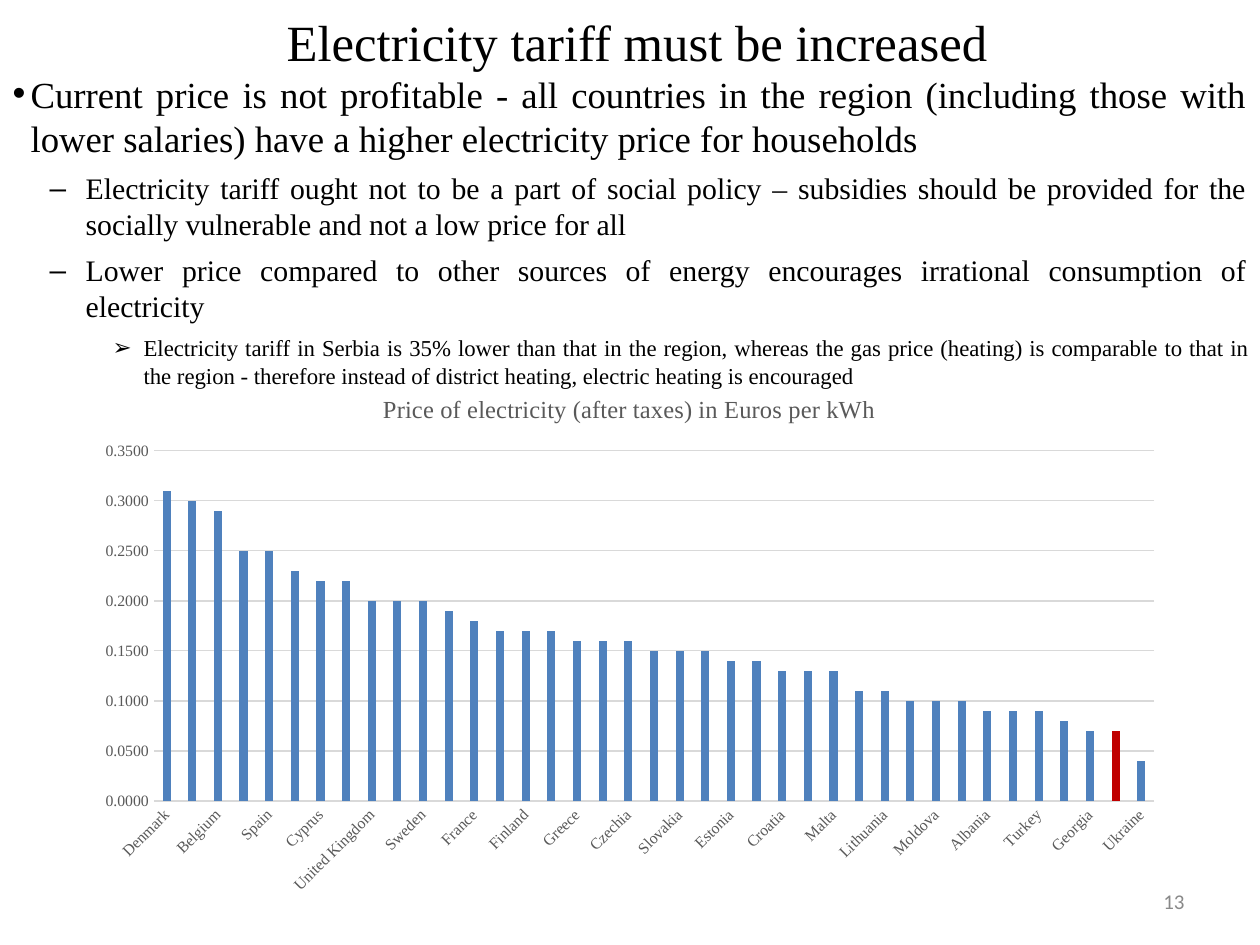
from dataclasses import dataclass

from lxml import etree
from pptx import Presentation, util as u
from pptx.chart.data import CategoryChartData
from pptx.dml.color import RGBColor
from pptx.enum import chart as ch, text
from pptx.oxml import parse_xml
from pptx.oxml.ns import nsdecls, qn

PX = u.Inches(1) / 126  # one px in EMU


def px(n):
    return u.Emu(round(n * PX))


@dataclass(frozen=True)
class Theme:
    font: str = "Times New Roman"
    number_font: str = "Calibri"
    ink: str = "000000"
    muted: str = "595959"
    number: str = "898989"
    grid: str = "D9D9D9"
    bar: str = "4F81BD"
    accent: str = "C00000"
    title: float = 29
    levels: tuple = (21, 17, 13)
    chart_title: float = 14
    chart: float = 10
    axis: float = 9
    small: float = 12


def style(font, size, color, name):
    font.size, font.name = u.Pt(size), name
    font.bold = False
    font.color.rgb = RGBColor.from_string(color)


def write(p, content, size, color, name, align):
    """Put one formatted run into a paragraph."""
    p.alignment = align
    r = p.add_run()
    r.text = content
    style(r.font, size, color, name)


def add_bullet(p, char, left, hanging):
    pPr = p._p.get_or_add_pPr()
    pPr.set("marL", str(px(left)))
    pPr.set("indent", str(-px(hanging)))
    etree.SubElement(pPr, qn("a:buFont")).set("typeface", "Arial")
    etree.SubElement(pPr, qn("a:buChar")).set("char", char)


class SlideBuilder:
    # bullet character, text indent and hanging indent for each level
    BULLETS = (("•", 18, 36), ("–", 73, 36), ("➢", 131, 31))

    def __init__(self, prs, theme):
        self.theme = theme
        self.s = prs.slides.add_slide(prs.slide_layouts[1])

    def frame(self, sp, box, anchor):
        sp.left, sp.top, sp.width, sp.height = map(px, box)
        tf = sp.text_frame
        tf.word_wrap = True
        tf.auto_size = text.MSO_AUTO_SIZE.NONE
        tf.vertical_anchor = anchor
        return tf

    def title(self, content, box):
        t = self.theme
        tf = self.frame(self.s.shapes.title, box, text.MSO_ANCHOR.MIDDLE)
        write(tf.paragraphs[0], content, t.title, t.ink, t.font, text.PP_ALIGN.CENTER)

    def body(self, items, box):
        t = self.theme
        tf = self.frame(self.s.placeholders[1], box, text.MSO_ANCHOR.TOP)
        for i, (level, content) in enumerate(items):
            p = tf.add_paragraph() if i else tf.paragraphs[0]
            p.level = level
            p.space_before = p.space_after = u.Pt(3)
            add_bullet(p, *self.BULLETS[level])
            write(p, content, t.levels[level], t.ink, t.font, text.PP_ALIGN.JUSTIFY)

    def number(self, content, box):
        t = self.theme
        sp = self.s.shapes.add_textbox(*map(px, box))
        tf = self.frame(sp, box, text.MSO_ANCHOR.MIDDLE)
        write(tf.paragraphs[0], content, t.small, t.number, t.number_font,
              text.PP_ALIGN.RIGHT)

    def column_chart(self, heading, prices, highlight, box, plot_box):
        t = self.theme
        data = CategoryChartData(number_format="#,##0.0000")
        data.categories = list(prices)
        data.add_series("Series 1", list(prices.values()))
        chart = self.s.shapes.add_chart(
            ch.XL_CHART_TYPE.COLUMN_CLUSTERED, *map(px, box), data).chart
        style(chart.font, t.chart, t.ink, t.font)
        chart.has_legend = False
        chart.has_title = True
        write(chart.chart_title.text_frame.paragraphs[0], heading,
              t.chart_title, t.muted, t.font, text.PP_ALIGN.CENTER)
        chart.chart_title.include_in_layout = False

        # Columns
        plot = chart.plots[0]
        plot.vary_by_categories = False
        plot.gap_width, plot.overlap = 219, -27
        series = plot.series[0]
        point = series.points[list(prices).index(highlight)]
        for item, color in ((series, t.bar), (point, t.accent)):
            item.format.fill.solid()
            item.format.fill.fore_color.rgb = RGBColor.from_string(color)

        # Axes
        cat, val = chart.category_axis, chart.value_axis
        for axis in (cat, val):
            style(axis.tick_labels.font, t.axis, t.muted, t.font)
            axis.major_tick_mark = axis.minor_tick_mark = ch.XL_TICK_MARK.NONE
        val.minimum_scale, val.maximum_scale, val.major_unit = 0, 0.35, 0.05
        val.tick_labels.number_format = "#,##0.0000"
        val.tick_labels.number_format_is_linked = False
        val.format.line.fill.background()
        val.has_major_gridlines = True
        for line in (cat.format.line, val.major_gridlines.format.line):
            line.color.rgb = RGBColor.from_string(t.grid)
            line.width = u.Pt(0.75)
        cat._element.find(qn("c:txPr")).find(qn("a:bodyPr")).set("rot", "-2700000")

        # Place the plot area inside the chart frame
        x, y, w, h = plot_box
        parts = (("x", (x - box[0]) / box[2]), ("y", (y - box[1]) / box[3]),
                 ("w", w / box[2]), ("h", h / box[3]))
        marks = '<c:layoutTarget val="inner"/><c:xMode val="edge"/><c:yMode val="edge"/>'
        marks += "".join(f'<c:{k} val="{v:.3f}"/>' for k, v in parts)
        area = chart._chartSpace.chart.plotArea
        for old in area.findall(qn("c:layout")):
            area.remove(old)
        area.insert(0, parse_xml(
            f'<c:layout {nsdecls("c")}><c:manualLayout>{marks}</c:manualLayout></c:layout>'))


POINTS = (
    (0, "Current price is not profitable - all countries in the region (including "
        "those with lower salaries) have a higher electricity price for households"),
    (1, "Electricity tariff ought not to be a part of social policy – subsidies "
        "should be provided for the socially vulnerable and not a low price for all"),
    (1, "Lower price compared to other sources of energy encourages irrational "
        "consumption of electricity"),
    (2, "Electricity tariff in Serbia is 35% lower than that in the region, whereas "
        "the gas price (heating) is comparable to that in the region - therefore "
        "instead of district heating, electric heating is encouraged"),
)

PRICES = {
    "Denmark": 0.31, "Germany": 0.3, "Belgium": 0.29, "Ireland": 0.25,
    "Spain": 0.25, "Portugal": 0.23, "Cyprus": 0.22, "Italy": 0.22,
    "United Kingdom": 0.2, "Austria": 0.2, "Sweden": 0.2, "Norway": 0.19,
    "France": 0.18, "Netherlands": 0.17, "Finland": 0.17, "Luxembourg": 0.17,
    "Greece": 0.16, "Slovenia": 0.16, "Czechia": 0.16, "Latvia": 0.15,
    "Slovakia": 0.15, "Iceland": 0.15, "Estonia": 0.14, "Poland": 0.14,
    "Croatia": 0.13, "Romania": 0.13, "Malta": 0.13, "Hungary": 0.11,
    "Lithuania": 0.11, "Montenegro": 0.1, "Moldova": 0.1, "Bulgaria": 0.1,
    "Albania": 0.09, "Bosnia and Herzegovina": 0.09, "Turkey": 0.09,
    "North Macedonia": 0.08, "Georgia": 0.07, "Serbia": 0.07, "Ukraine": 0.04,
}


def main():
    prs = Presentation()
    prs.slide_width, prs.slide_height = px(1260), px(945)
    slide = SlideBuilder(prs, Theme())
    slide.title("Electricity tariff must be increased", (15, -3, 1245, 88))
    slide.body(POINTS, (0, 65, 1260, 218))
    slide.number("13", (903, 876, 294, 50))
    slide.column_chart("Price of electricity (after taxes) in Euros per kWh", PRICES,
                       "Serbia", (84, 372, 1091, 533), (154, 451, 1000, 350))
    prs.save("out.pptx")


if __name__ == "__main__":
    main()
